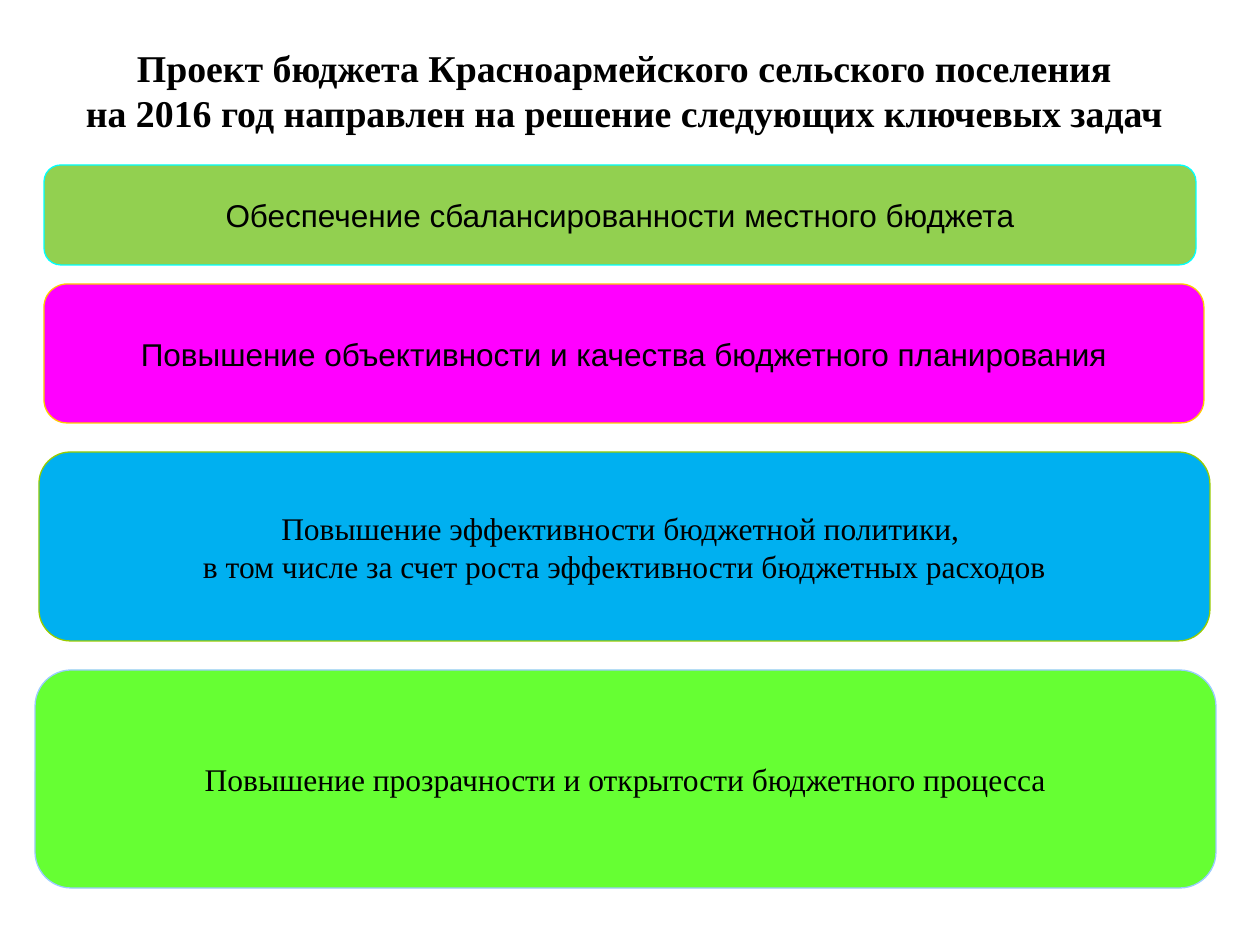
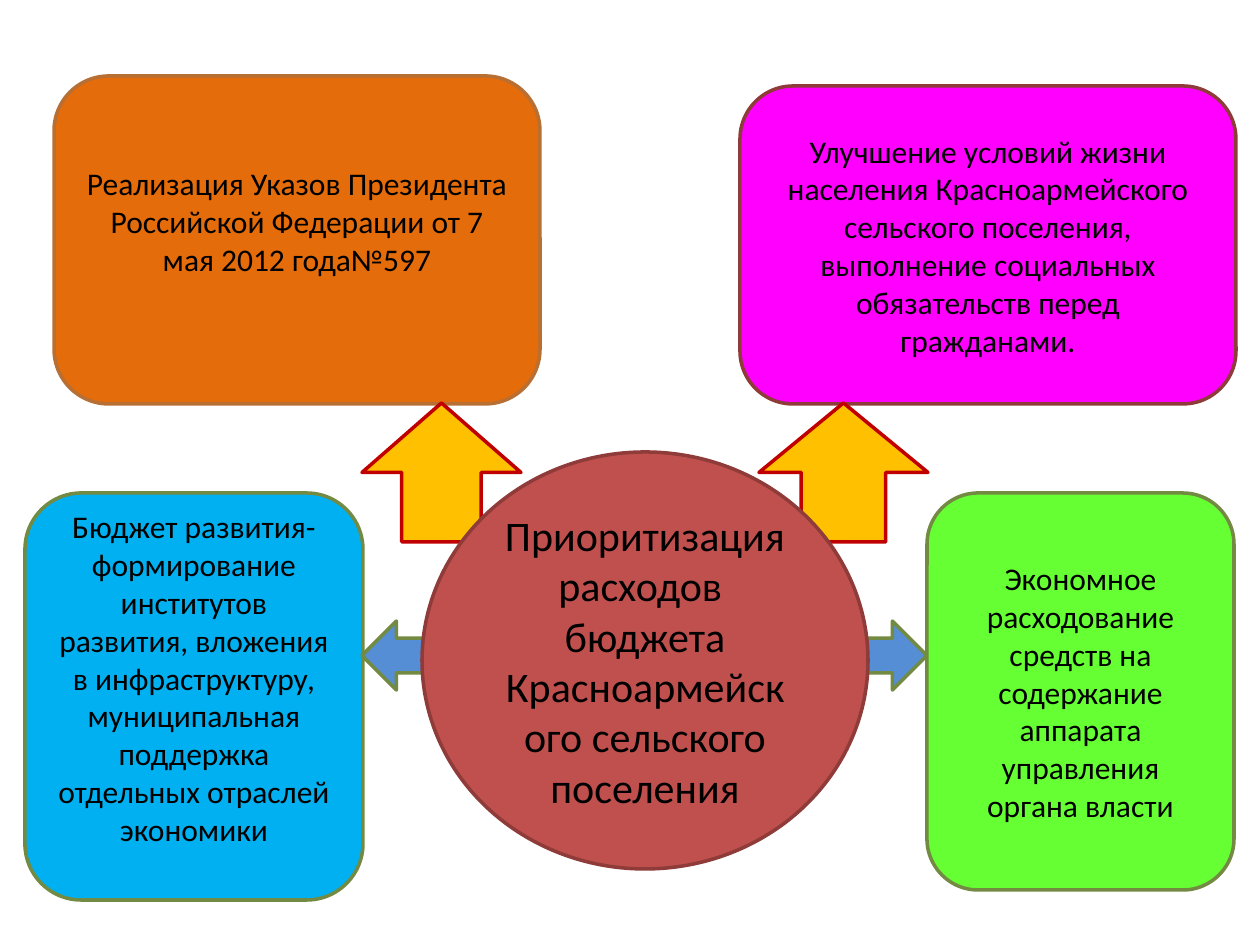
"""Build two slides on the key tasks and spending priorities of a local budget."""
from copy import deepcopy

from pptx import Presentation
from pptx import util as u
from pptx.dml.color import RGBColor
from pptx.enum import shapes, text
from pptx.oxml.ns import qn

PX = u.Inches(1) / 126
LINE_PX = 38
INSET_PX = 6

BLACK = RGBColor(0x00, 0x00, 0x00)
LIME = RGBColor(0x92, 0xD0, 0x50)
MAGENTA = RGBColor(0xFF, 0x00, 0xFF)
SKY = RGBColor(0x00, 0xB0, 0xF0)
GREEN = RGBColor(0x66, 0xFF, 0x33)
ORANGE = RGBColor(0xE4, 0x6C, 0x0A)
BLUE = RGBColor(0x55, 0x8E, 0xD5)
GOLD = RGBColor(0xFF, 0xC0, 0x00)
BRICK = RGBColor(0xC0, 0x50, 0x4D)
CYAN_EDGE = RGBColor(0x00, 0xFF, 0xFF)
YELLOW_EDGE = RGBColor(0xFF, 0xCC, 0x00)
LIME_EDGE = RGBColor(0x99, 0xCC, 0x00)
PALE_EDGE = RGBColor(0x99, 0xCC, 0xFF)
ORANGE_EDGE = RGBColor(0xB7, 0x6F, 0x34)
OLIVE_EDGE = RGBColor(0x73, 0x8A, 0x42)
BRICK_EDGE = RGBColor(0x8E, 0x3B, 0x39)
RED_EDGE = RGBColor(0xC0, 0x00, 0x00)

SERIF, SANS, BODY = "Times New Roman", "Arial", "Calibri"
KIND = shapes.MSO_SHAPE

TITLE = ("Проект бюджета Красноармейского сельского поселения\v"
         "на 2016 год направлен на решение следующих ключевых задач")
TITLE_BOX = (34, 35, 1181, 110)

TASKS = [
    ("Обеспечение сбалансированности местного бюджета",
     SANS, (44, 165, 1152, 100), LIME, CYAN_EDGE),
    ("Повышение объективности и качества бюджетного планирования",
     SANS, (44, 284, 1160, 139), MAGENTA, YELLOW_EDGE),
    ("Повышение эффективности бюджетной политики, \n"
     "в том числе за счет роста эффективности бюджетных расходов",
     SERIF, (39, 452, 1171, 189), SKY, LIME_EDGE),
    ("Повышение прозрачности и открытости бюджетного процесса",
     SERIF, (35, 670, 1181, 218), GREEN, PALE_EDGE),
]

PRIORITIES = [
    ("Реализация Указов Президента Российской Федерации от 7 мая 2012 года№597",
     (54, 76, 486, 328), ORANGE, ORANGE_EDGE, LINE_PX),
    ("Бюджет развития-формирование институтов развития, вложения в инфраструктуру, "
     "муниципальная поддержка отдельных отраслей экономики",
     (25, 493, 338, 407), SKY, OLIVE_EDGE, LINE_PX),
    ("Экономное расходование средств на содержание аппарата управления органа власти",
     (927, 493, 307, 397), GREEN, OLIVE_EDGE, 0),
    ("Улучшение условий жизни населения Красноармейского сельского поселения, "
     "выполнение социальных обязательств перед гражданами.",
     (740, 86, 496, 318), MAGENTA, BRICK_EDGE, 0),
]

ARROWS = [
    (KIND.LEFT_ARROW, (362, 621, 69, 69), BLUE, OLIVE_EDGE),
    (KIND.RIGHT_ARROW, (858, 621, 69, 69), BLUE, OLIVE_EDGE),
    (KIND.UP_ARROW, (362, 403, 159, 139), GOLD, RED_EDGE),
    (KIND.UP_ARROW, (759, 403, 169, 139), GOLD, RED_EDGE),
]

HUB = "Приоритизация\nрасходов \nбюджета\nКрасноармейского сельского поселения"
HUB_BOX = (422, 452, 446, 417)


def emu(box):
    return [round(length * PX) for length in box]


def write(part, words, font, size, bold=False, wrap=True, lift=0):
    frame = part.text_frame
    frame.text = words
    frame.word_wrap = wrap
    frame.auto_size = text.MSO_AUTO_SIZE.NONE
    frame.vertical_anchor = text.MSO_ANCHOR.MIDDLE
    frame.margin_bottom = round((INSET_PX + lift) * PX)
    for paragraph in frame.paragraphs:
        paragraph.alignment = text.PP_ALIGN.CENTER
        for run in paragraph.runs:
            run.font.name = font
            run.font.size = u.Pt(size)
            run.font.bold = bold
            run.font.color.rgb = BLACK


def add_part(slide, kind, box, fill, edge, weight):
    part = slide.shapes.add_shape(kind, *emu(box))
    part.shadow.inherit = False
    part.fill.solid()
    part.fill.fore_color.rgb = fill
    part.line.color.rgb = edge
    part.line.width = u.Pt(weight)
    return part


def build_tasks(deck):
    slide = deck.slides.add_slide(deck.slide_layouts[5])
    title = slide.shapes.title
    title.left, title.top, title.width, title.height = emu(TITLE_BOX)
    write(title, TITLE, SERIF, 21.6, bold=True)
    heading = title.text_frame.paragraphs[0]
    for line_break in heading._p.findall(qn("a:br")):
        line_break.append(deepcopy(heading.runs[0]._r.rPr))
    for words, font, box, fill, edge in TASKS:
        task = add_part(slide, KIND.ROUNDED_RECTANGLE, box, fill, edge, 0.75)
        write(task, words, font, 18, wrap=False)


def build_priorities(deck):
    slide = deck.slides.add_slide(deck.slide_layouts[6])
    for words, box, fill, edge, lift in PRIORITIES:
        priority = add_part(slide, KIND.ROUNDED_RECTANGLE, box, fill, edge, 2)
        write(priority, words, BODY, 18, lift=lift)
    for kind, box, fill, edge in ARROWS:
        add_part(slide, kind, box, fill, edge, 2)
    hub = add_part(slide, KIND.OVAL, HUB_BOX, BRICK, BRICK_EDGE, 2)
    write(hub, HUB, BODY, 24)


def main():
    deck = Presentation()
    deck.slide_width, deck.slide_height = u.Inches(10), u.Inches(7.5)
    build_tasks(deck)
    build_priorities(deck)
    deck.save("out.pptx")


if __name__ == "__main__":
    main()
